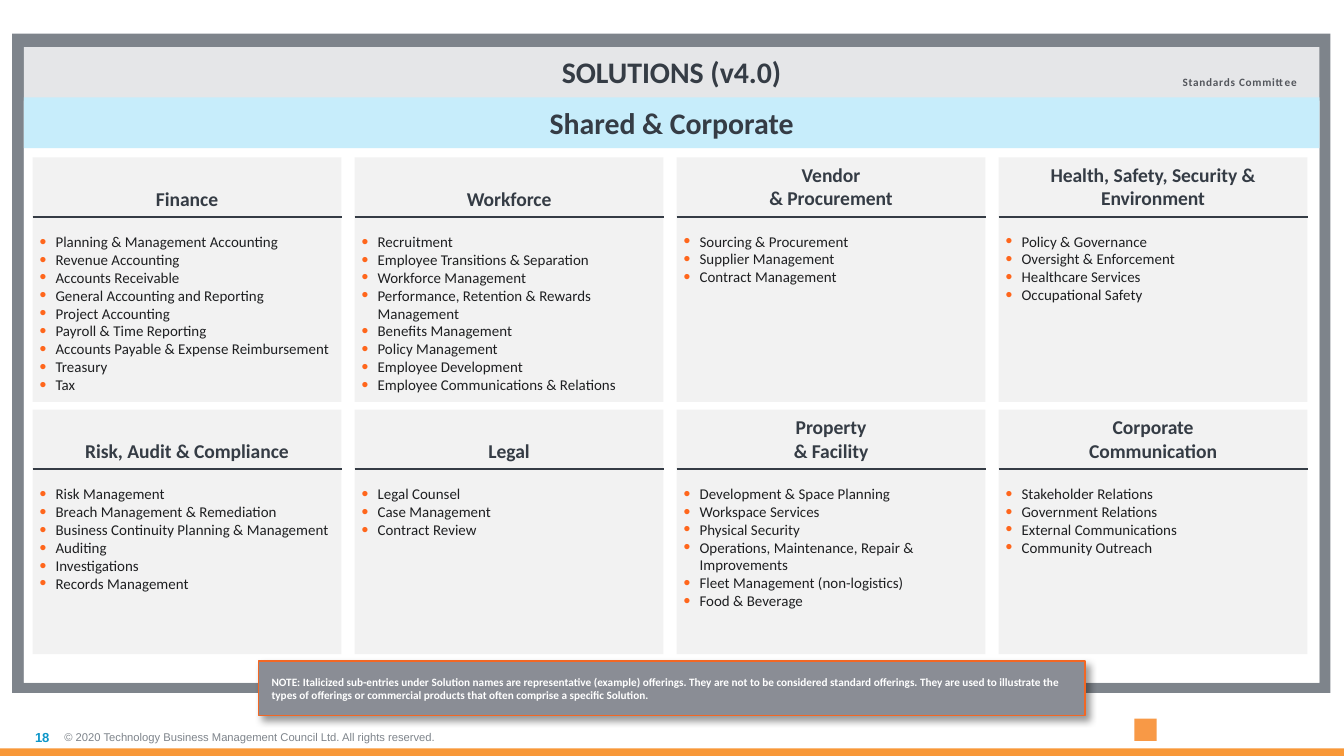
from dataclasses import dataclass
from typing import NamedTuple, Optional

from lxml import etree
from pptx import Presentation
from pptx.dml.color import RGBColor
from pptx.enum.shapes import MSO_CONNECTOR, MSO_SHAPE
from pptx.enum.text import MSO_ANCHOR, MSO_AUTO_SIZE, PP_ALIGN
from pptx.oxml.ns import qn
from pptx.util import Pt

RECTANGLE = MSO_SHAPE.RECTANGLE
STRAIGHT = MSO_CONNECTOR.STRAIGHT
TOP, MIDDLE = MSO_ANCHOR.TOP, MSO_ANCHOR.MIDDLE
LEFT, CENTER, RIGHT = PP_ALIGN.LEFT, PP_ALIGN.CENTER, PP_ALIGN.RIGHT
NO_AUTOFIT = MSO_AUTO_SIZE.NONE


@dataclass(frozen=True)
class Theme:
    font: str = "Calibri"
    footer_font: str = "Arial"
    ink: str = "353C45"
    body: str = "1E1F21"
    muted: str = "53565C"
    white: str = "FFFFFF"
    frame: str = "7E848B"
    header: str = "E5E6E8"
    band: str = "C7EDFB"
    card: str = "F2F2F2"
    note: str = "8A8D95"
    note_line: str = "F26724"
    bullet: str = "FF661C"
    base_bar: str = "F89838"
    mark: str = "F89946"
    number: str = "0D96C9"
    title_size: float = 16
    heading_size: float = 10.5
    list_size: float = 8
    small_size: float = 6
    number_size: float = 7


class Area(NamedTuple):
    left: float
    top: float
    width: float
    height: float

    def points(self) -> tuple:
        return tuple(Pt(value) for value in self)


@dataclass(frozen=True)
class Style:
    size: float
    color: str
    bold: bool = False
    font: str = "Calibri"


@dataclass(frozen=True)
class Card:
    heading: str
    items: tuple
    heading_lines: int = 2


THEME = Theme()
TITLE = Style(THEME.title_size, THEME.ink, True)
HEADING = Style(THEME.heading_size, THEME.ink, True)
LIST = Style(THEME.list_size, THEME.body)

# Card grid
COLUMNS = 4
CARD = Area(17.5, 84.3, 165.5, 131)
COLUMN_STEP, ROW_STEP = 172.5, 135.2
RULE_OFFSET = 31.9
CARD_INSET = 2.9
HEADING_LINE = 12.8

CARDS = (
    Card("Finance", (
        "Planning & Management Accounting", "Revenue Accounting", "Accounts Receivable",
        "General Accounting and Reporting", "Project Accounting", "Payroll & Time Reporting",
        "Accounts Payable & Expense Reimbursement", "Treasury", "Tax"), 1),
    Card("Workforce", (
        "Recruitment", "Employee Transitions & Separation", "Workforce Management",
        "Performance, Retention & Rewards Management", "Benefits Management",
        "Policy Management", "Employee Development", "Employee Communications & Relations"), 1),
    Card("Vendor\n& Procurement", (
        "Sourcing & Procurement", "Supplier Management", "Contract Management")),
    Card("Health, Safety, Security & Environment", (
        "Policy & Governance", "Oversight & Enforcement", "Healthcare Services",
        "Occupational Safety")),
    Card("Risk, Audit & Compliance", (
        "Risk Management", "Breach Management & Remediation",
        "Business Continuity Planning & Management", "Auditing", "Investigations",
        "Records Management"), 1),
    Card("Legal", ("Legal Counsel", "Case Management", "Contract Review"), 1),
    Card("Property\n& Facility", (
        "Development & Space Planning", "Workspace Services", "Physical Security",
        "Operations, Maintenance, Repair & Improvements", "Fleet Management (non-logistics)",
        "Food & Beverage")),
    Card("Corporate\nCommunication", (
        "Stakeholder Relations", "Government Relations", "External Communications",
        "Community Outreach")),
)


def rgb(color: str) -> RGBColor:
    return RGBColor.from_string(color)


def add_span(para, text: str, style: Style):
    span = para.add_run()
    span.text = text
    span.font.name, span.font.size, span.font.bold = style.font, Pt(style.size), style.bold
    span.font.color.rgb = rgb(style.color)
    return span


def add_text(para, text: str, style: Style, align=LEFT) -> None:
    para.alignment = align
    for index, line in enumerate(text.split("\n")):
        if index:
            para.add_line_break()
        add_span(para, line, style)


def set_frame(box, anchor, inset: Optional[float] = None, wrap: bool = True):
    frame = box.text_frame
    frame.word_wrap, frame.vertical_anchor, frame.auto_size = wrap, anchor, NO_AUTOFIT
    if inset is not None:
        frame.margin_left = frame.margin_right = Pt(inset)
        frame.margin_top = frame.margin_bottom = Pt(inset)
    return frame


def add_panel(shapes, area: Area, fill: str):
    box = shapes.add_shape(RECTANGLE, *area.points())
    box.shadow.inherit = False
    box.fill.solid()
    box.fill.fore_color.rgb = rgb(fill)
    box.line.fill.background()
    return box


def add_label(shapes, area: Area, text: str, style: Style, anchor=MIDDLE, align=LEFT, wrap=True):
    box = shapes.add_textbox(*area.points())
    frame = set_frame(box, anchor, 0, wrap)
    add_text(frame.paragraphs[0], text, style, align)
    return frame.paragraphs[0].runs[0]


def add_bullet(para) -> None:
    properties = para._p.get_or_add_pPr()
    properties.set("marL", str(Pt(9.4)))
    properties.set("indent", str(Pt(-8.6)))
    color = etree.SubElement(properties, qn("a:buClr"))
    etree.SubElement(color, qn("a:srgbClr"), val=THEME.bullet)
    etree.SubElement(properties, qn("a:buSzPct"), val="130000")
    etree.SubElement(properties, qn("a:buFont"), typeface="Arial")
    etree.SubElement(properties, qn("a:buChar"), char="•")


def add_drop_shadow(box) -> None:
    effects = box.element.spPr.find(qn("a:effectLst"))
    shadow = etree.SubElement(effects, qn("a:outerShdw"), blurRad=str(Pt(4)), dist=str(Pt(3)),
                              dir="2700000", algn="tl", rotWithShape="0")
    color = etree.SubElement(shadow, qn("a:srgbClr"), val="000000")
    etree.SubElement(color, qn("a:alpha"), val="40000")


def add_card(page, card: Card, area: Area) -> None:
    shapes = page.shapes.add_group_shape().shapes
    frame = set_frame(add_panel(shapes, area, THEME.card), TOP, CARD_INSET)
    # Every heading ends on the second line
    frame.margin_top = Pt(CARD_INSET + HEADING_LINE * (2 - card.heading_lines))
    heading = frame.paragraphs[0]
    add_text(heading, card.heading, HEADING, CENTER)
    heading.space_after = Pt(12)
    for item in card.items:
        para = frame.add_paragraph()
        para.level = 1
        add_bullet(para)
        add_text(para, item, LIST)
    rule_top = Pt(area.top + RULE_OFFSET)
    rule = shapes.add_connector(STRAIGHT, Pt(area.left), rule_top,
                                Pt(area.left + area.width), rule_top)
    rule.line.color.rgb = rgb(THEME.ink)
    rule.line.width = Pt(1)
    etree.SubElement(rule.element.spPr, qn("a:effectLst"))


def main() -> None:
    deck = Presentation()
    deck.slide_width, deck.slide_height = Pt(720), Pt(405)
    page = deck.slides.add_slide(deck.slide_layouts[5])
    shapes = page.shapes

    # Footer
    add_label(shapes, Area(34.5, 384.5, 242, 21),
              "© 2020 Technology Business Management Council Ltd. All rights reserved.",
              Style(THEME.small_size, THEME.frame, font=THEME.footer_font))
    add_label(shapes, Area(0, 384.5, 26.5, 21), "18",
              Style(THEME.number_size, THEME.number, True, THEME.footer_font), align=RIGHT)
    add_panel(shapes, Area(607.7, 385, 12, 12), THEME.mark)
    add_panel(shapes, Area(0, 401, 720, 4), THEME.base_bar)

    # Outer frame with the title panel on top of it
    border = add_panel(shapes, Area(6.5, 18, 706.2, 353.3), THEME.frame)
    title = shapes.title
    title.left, title.top, title.width, title.height = Area(12.8, 25.2, 694, 340.6).points()
    title.fill.solid()
    title.fill.fore_color.rgb = rgb(THEME.header)
    add_text(set_frame(title, TOP).paragraphs[0], "SOLUTIONS (v4.0)", TITLE, CENTER)
    border.element.addnext(title.element)

    # Content panel, committee label and section band
    add_panel(shapes, Area(12.8, 54, 694, 311.8), THEME.white)
    committee = add_label(shapes, Area(633.6, 40.5, 62.6, 7.2), "Standards Committee",
                          Style(THEME.small_size, THEME.muted, True), TOP, wrap=False)
    committee.font._element.set("spc", "40")
    band = add_panel(shapes, Area(12.8, 52.2, 694, 27.2), THEME.band)
    add_text(set_frame(band, MIDDLE).paragraphs[0], "Shared & Corporate", TITLE, CENTER)

    # Note
    note = add_panel(shapes, Area(138.4, 354.2, 442.8, 29.2), THEME.note)
    note.line.color.rgb = rgb(THEME.note_line)
    note.line.width = Pt(0.75)
    add_drop_shadow(note)
    add_text(set_frame(note, MIDDLE, 7.2).paragraphs[0],
             "NOTE: Italicized sub-entries under Solution names are representative (example) "
             "offerings. They are not to be considered standard offerings. They are used to "
             "illustrate the types of offerings or commercial products that often comprise a "
             "specific Solution.", Style(THEME.small_size, THEME.white, True))

    # Solution cards
    for index, card in enumerate(CARDS):
        row, column = divmod(index, COLUMNS)
        add_card(page, card, CARD._replace(left=CARD.left + column * COLUMN_STEP,
                                           top=CARD.top + row * ROW_STEP))

    deck.save("out.pptx")


if __name__ == "__main__":
    main()
